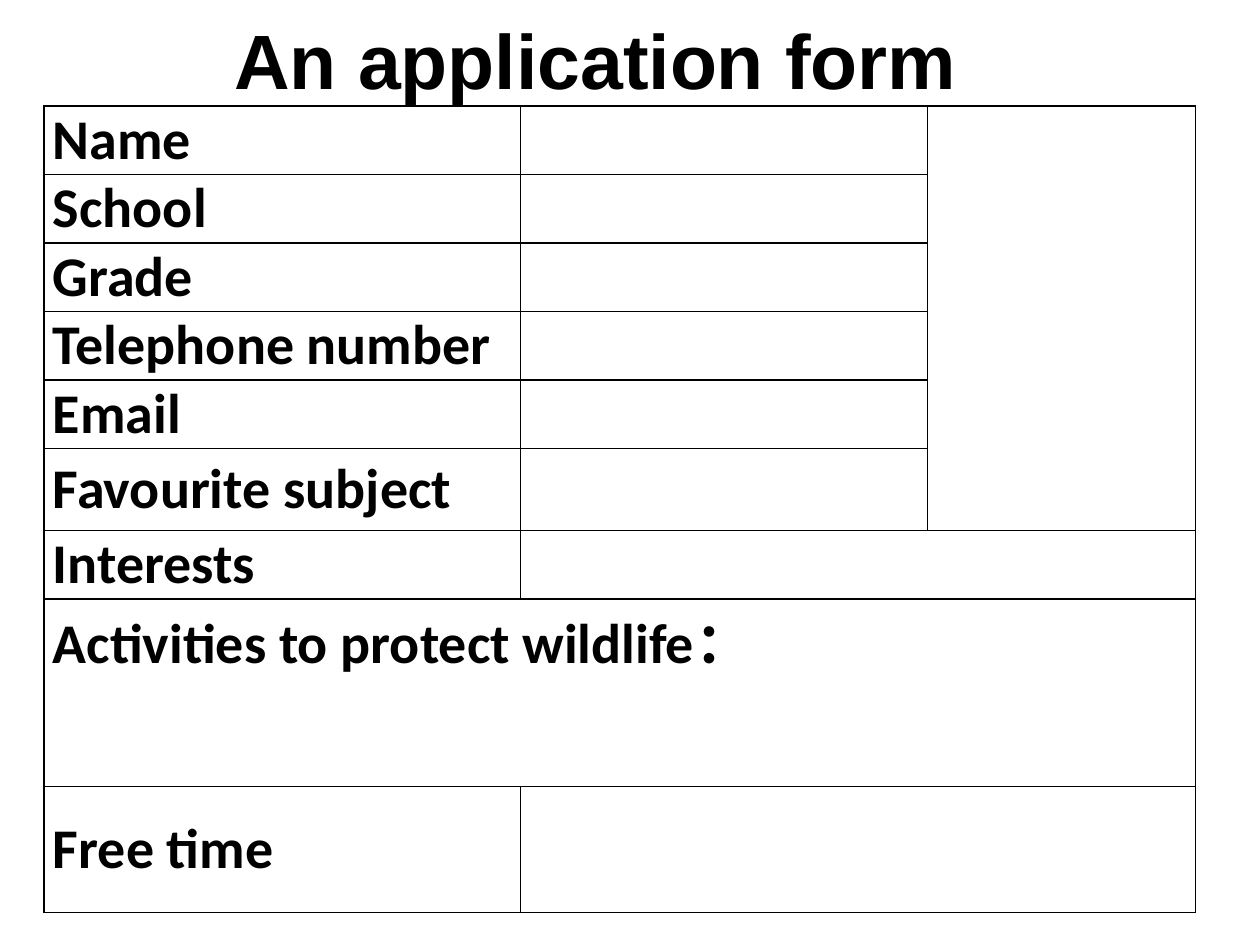
from lxml import etree
from pptx import Presentation
from pptx.dml.color import RGBColor
from pptx.enum.text import MSO_ANCHOR, MSO_AUTO_SIZE, PP_ALIGN
from pptx.oxml.ns import qn
from pptx.util import Inches, Pt

MIDDLE, TOP = MSO_ANCHOR.MIDDLE, MSO_ANCHOR.TOP
JUSTIFY = PP_ALIGN.JUSTIFY
BLACK = "000000"

TITLE = "An application form"
# label, row height
FIELDS = [
    ("Name", 0.54),
    ("School", 0.54),
    ("Grade", 0.54),
    ("Telephone number", 0.54),
    ("Email", 0.54),
    ("Favourite subject", 0.65),
    ("Interests", 0.54),
    ("Activities to protect wildlife：", 1.49),
    ("Free time", 1),
]
COL_WIDTHS = [3.78, 3.23, 2.13]
# first row, first column, last row, last column
MERGES = [(0, 2, 5, 2), (6, 1, 6, 2), (7, 0, 7, 2), (8, 1, 8, 2)]
TOP_ROW = 7  # its label sits at the top, leaving room to write


def add_run(p, text, size, font):
    r = p.add_run()
    r.text = text
    r.font.size = Pt(size)
    r.font.name = font
    r.font.bold = True
    r.font.color.rgb = RGBColor.from_string(BLACK)


def add_borders(cell):
    tc_pr = cell._tc.get_or_add_tcPr()
    for side in ("lnL", "lnR", "lnT", "lnB"):
        ln = etree.SubElement(tc_pr, qn(f"a:{side}"), w=str(Pt(1)))
        fill = etree.SubElement(ln, qn("a:solidFill"))
        etree.SubElement(fill, qn("a:srgbClr"), val=BLACK)


def add_form(s):
    heights = [height for _, height in FIELDS]
    table = s.shapes.add_table(
        len(FIELDS), len(COL_WIDTHS), Inches(0.35), Inches(0.84),
        Inches(sum(COL_WIDTHS)), Inches(sum(heights))).table
    table.first_row = table.horz_banding = False
    for col, width in zip(table.columns, COL_WIDTHS):
        col.width = Inches(width)
    for row, height in zip(table.rows, heights):
        row.height = Inches(height)
        for cell in row.cells:
            add_borders(cell)
            cell.fill.background()
    for top, left, bottom, right in MERGES:
        table.cell(top, left).merge(table.cell(bottom, right))
    for i, (label, _) in enumerate(FIELDS):
        cell = table.cell(i, 0)
        cell.margin_left = cell.margin_right = Inches(0.07)
        cell.margin_top = cell.margin_bottom = 0
        cell.vertical_anchor = TOP if i == TOP_ROW else MIDDLE
        p = cell.text_frame.paragraphs[0]
        p.alignment = JUSTIFY
        add_run(p, label, 32, "Calibri")


def add_title(s):
    tf = s.shapes.add_textbox(
        Inches(1.76), Inches(0.05), Inches(6), Inches(0.84)).text_frame
    tf.word_wrap = False
    tf.auto_size = MSO_AUTO_SIZE.SHAPE_TO_FIT_TEXT
    add_run(tf.paragraphs[0], TITLE, 44, "Arial")


def main():
    prs = Presentation()
    prs.slide_width, prs.slide_height = Inches(10), Inches(7.5)
    s = prs.slides.add_slide(prs.slide_layouts[6])
    add_form(s)
    add_title(s)
    prs.save("out.pptx")


if __name__ == "__main__":
    main()
